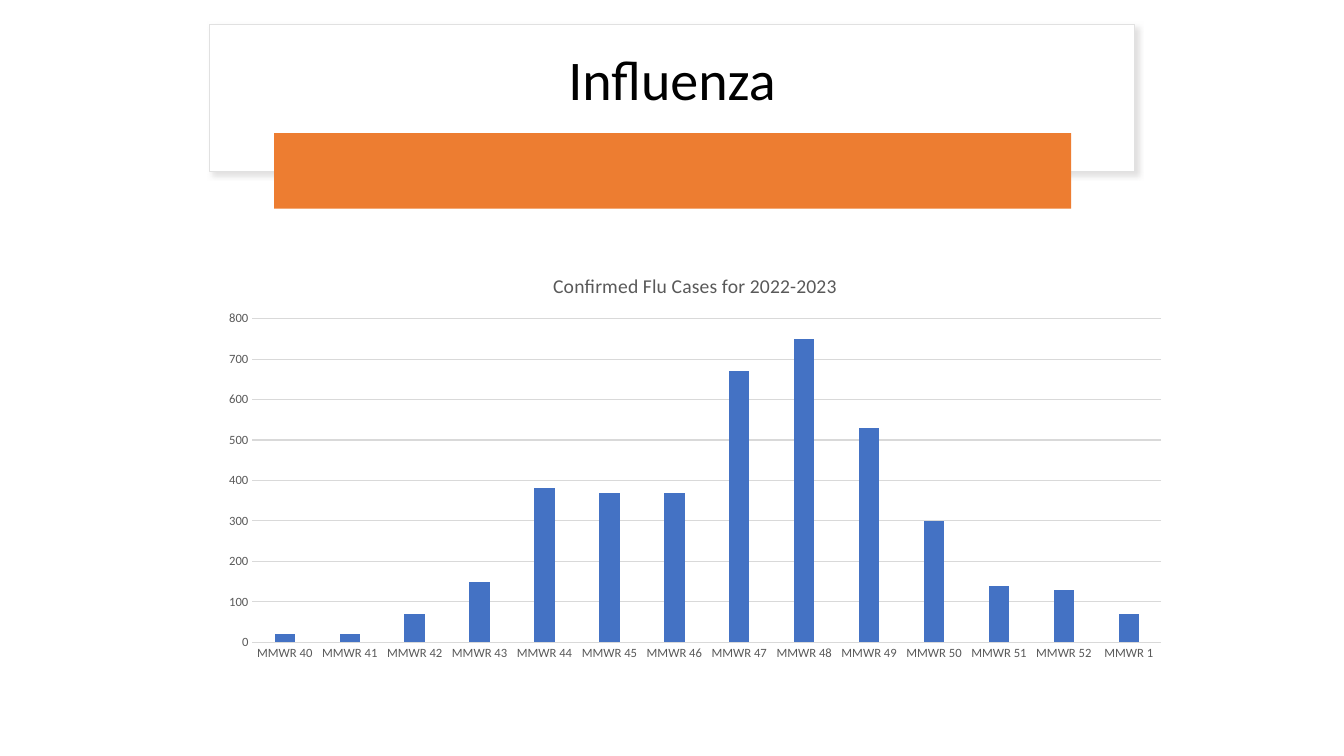
from dataclasses import dataclass

from lxml import etree
from pptx import Presentation
from pptx.chart.data import CategoryChartData
from pptx.dml.color import RGBColor
from pptx.enum.chart import XL_CHART_TYPE, XL_TICK_MARK
from pptx.enum.shapes import MSO_SHAPE
from pptx.enum.text import MSO_ANCHOR, PP_ALIGN
from pptx.oxml import parse_xml
from pptx.oxml.ns import nsdecls, qn
from pptx.util import Inches, Pt

RECT = MSO_SHAPE.RECTANGLE
ROUND = MSO_SHAPE.ROUNDED_RECTANGLE
COLUMN = XL_CHART_TYPE.COLUMN_CLUSTERED
NO_TICK = XL_TICK_MARK.NONE
MIDDLE = MSO_ANCHOR.MIDDLE
CENTER = PP_ALIGN.CENTER

WIDE, HIGH = 13.33, 7.5


@dataclass(frozen=True)
class Theme:
    font: str = "Calibri"
    paper: str = "FFFFFF"
    ink: str = "000000"
    edge: str = "E1E1E1"
    shade: str = "C5C3C3"
    band: str = "ED7D31"
    bar: str = "4472C4"
    grid: str = "D9D9D9"
    label: str = "595959"
    head: int = 40
    title: int = 14
    tick: int = 9


THEME = Theme()

# Places as shares of the slide: left, top, width, height
CARD = (0.156, 0.032, 0.688, 0.195)
HEAD = (0.1725, 0.045, 0.655, 0.127)
BAND = (0.204, 0.176, 0.593, 0.1)
CHART = (0.156, 0.337, 0.7225, 0.549)

# Plot area as shares of the chart
PLOT = {"x": 0.044, "y": 0.154, "w": 0.936, "h": 0.78}

WEEKS = [f"MMWR {week}" for week in (*range(40, 53), 1)]
CASES = (20, 20, 70, 150, 380, 370, 370, 670, 750, 530, 300, 140, 130, 70)


def place(box):
    left, top, width, height = box
    return (Inches(left * WIDE), Inches(top * HIGH),
            Inches(width * WIDE), Inches(height * HIGH))


def color(code):
    return RGBColor.from_string(code)


def style(font, size, code):
    font.name = THEME.font
    font.size = Pt(size)
    font.bold = False
    font.color.rgb = color(code)


def stroke(line, code, width):
    line.color.rgb = color(code)
    line.width = Pt(width)


def add_block(slide, kind, box, fill):
    block = slide.shapes.add_shape(kind, *place(box))
    block.shadow.inherit = False
    block.fill.solid()
    block.fill.fore_color.rgb = color(fill)
    block.line.fill.background()
    return block


def add_shade(block):
    """Give a block a soft shadow to the lower right."""
    effects = block._element.spPr.find(qn("a:effectLst"))
    effects.append(parse_xml(
        f'<a:outerShdw {nsdecls("a")} blurRad="{Pt(4)}" dist="{Pt(3)}" '
        'dir="2700000" algn="tl" rotWithShape="0">'
        f'<a:srgbClr val="{THEME.shade}"><a:alpha val="50000"/></a:srgbClr>'
        '</a:outerShdw>'))


def add_head(slide, text, box):
    frame = slide.shapes.add_textbox(*place(box)).text_frame
    frame.word_wrap = True
    frame.vertical_anchor = MIDDLE
    frame.text = text
    para = frame.paragraphs[0]
    para.alignment = CENTER
    para.line_spacing = 0.9
    style(para.runs[0].font, THEME.head, THEME.ink)


def set_plot(chart):
    """Fix the inner plot area within the chart."""
    area = chart._chartSpace.chart.plotArea
    for old in area.findall(qn("c:layout")):
        area.remove(old)
    layout = parse_xml(f'<c:layout {nsdecls("c")}/>')
    manual = etree.SubElement(layout, qn("c:manualLayout"))
    parts = {"layoutTarget": "inner", "xMode": "edge", "yMode": "edge", **PLOT}
    for name, value in parts.items():
        etree.SubElement(manual, qn(f"c:{name}")).set("val", str(value))
    area.insert(0, layout)


def add_bars(slide, title, box):
    data = CategoryChartData()
    data.categories = WEEKS
    data.add_series("Series 1", CASES)
    chart = slide.shapes.add_chart(COLUMN, *place(box), data).chart
    chart.has_legend = False
    chart.font.name = THEME.font

    # Title
    chart.has_title = True
    frame = chart.chart_title.text_frame
    frame.text = title
    style(frame.paragraphs[0].runs[0].font, THEME.title, THEME.label)
    chart.chart_title.include_in_layout = False

    # Columns
    plot = chart.plots[0]
    plot.vary_by_categories = False
    plot.gap_width = 219
    plot.overlap = -27
    fill = plot.series[0].format.fill
    fill.solid()
    fill.fore_color.rgb = color(THEME.bar)

    # Axes
    weeks, cases = chart.category_axis, chart.value_axis
    for axis in (weeks, cases):
        axis.major_tick_mark = NO_TICK
        axis.minor_tick_mark = NO_TICK
        style(axis.tick_labels.font, THEME.tick, THEME.label)
    stroke(weeks.format.line, THEME.grid, 0.75)
    cases.format.line.fill.background()
    cases.minimum_scale, cases.maximum_scale = 0, 800
    cases.major_unit = 100
    stroke(cases.major_gridlines.format.line, THEME.grid, 0.75)
    set_plot(chart)


def main():
    deck = Presentation()
    deck.slide_width, deck.slide_height = Inches(WIDE), Inches(HIGH)
    slide = deck.slides.add_slide(deck.slide_layouts[6])

    # Heading card with its band
    card = add_block(slide, RECT, CARD, THEME.paper)
    stroke(card.line, THEME.edge, 1)
    add_shade(card)
    add_head(slide, "Influenza", HEAD)
    band = add_block(slide, ROUND, BAND, THEME.band)
    band.adjustments[0] = 0

    # Weekly cases
    add_bars(slide, "Confirmed Flu Cases for 2022-2023", CHART)
    deck.save("out.pptx")


if __name__ == "__main__":
    main()
